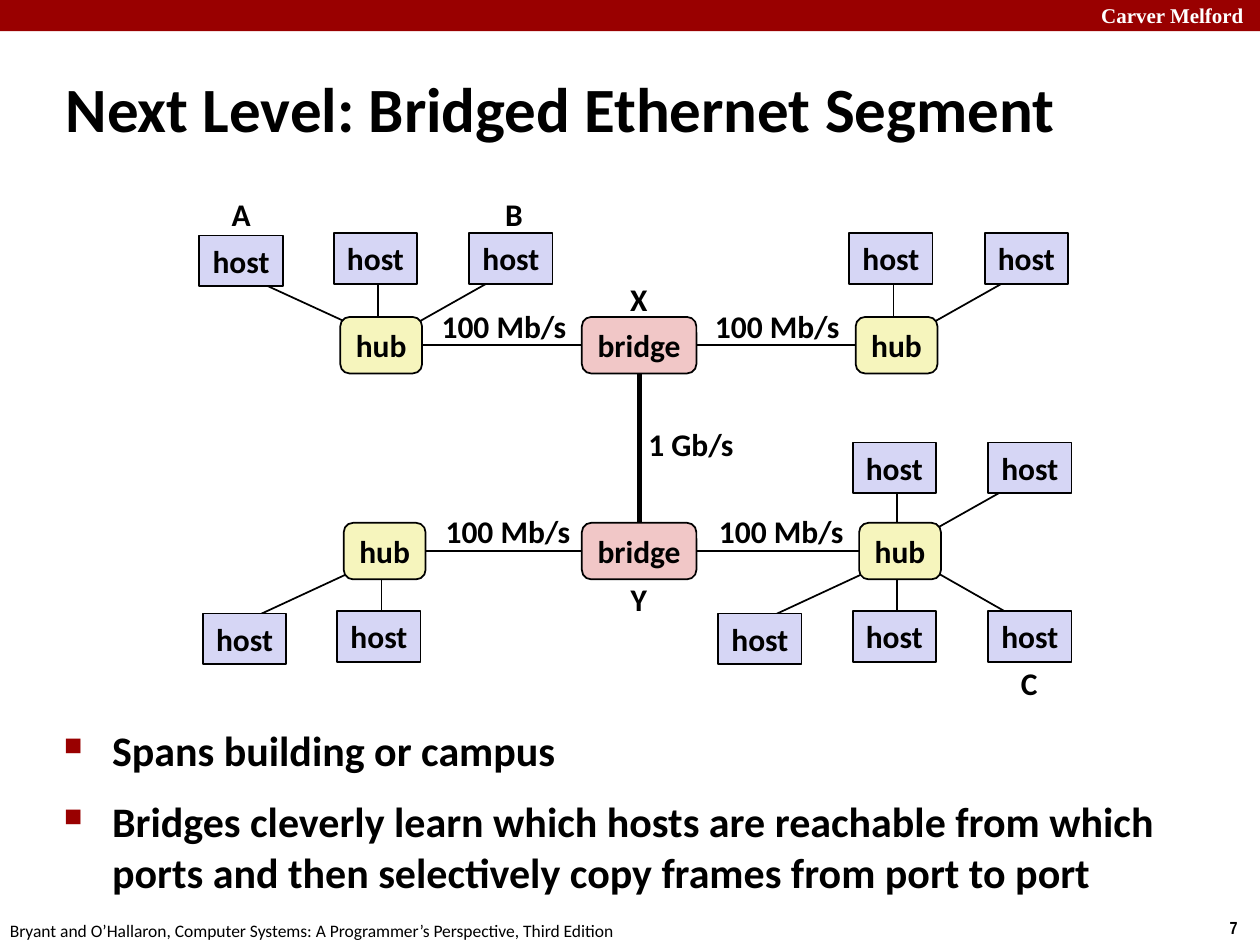
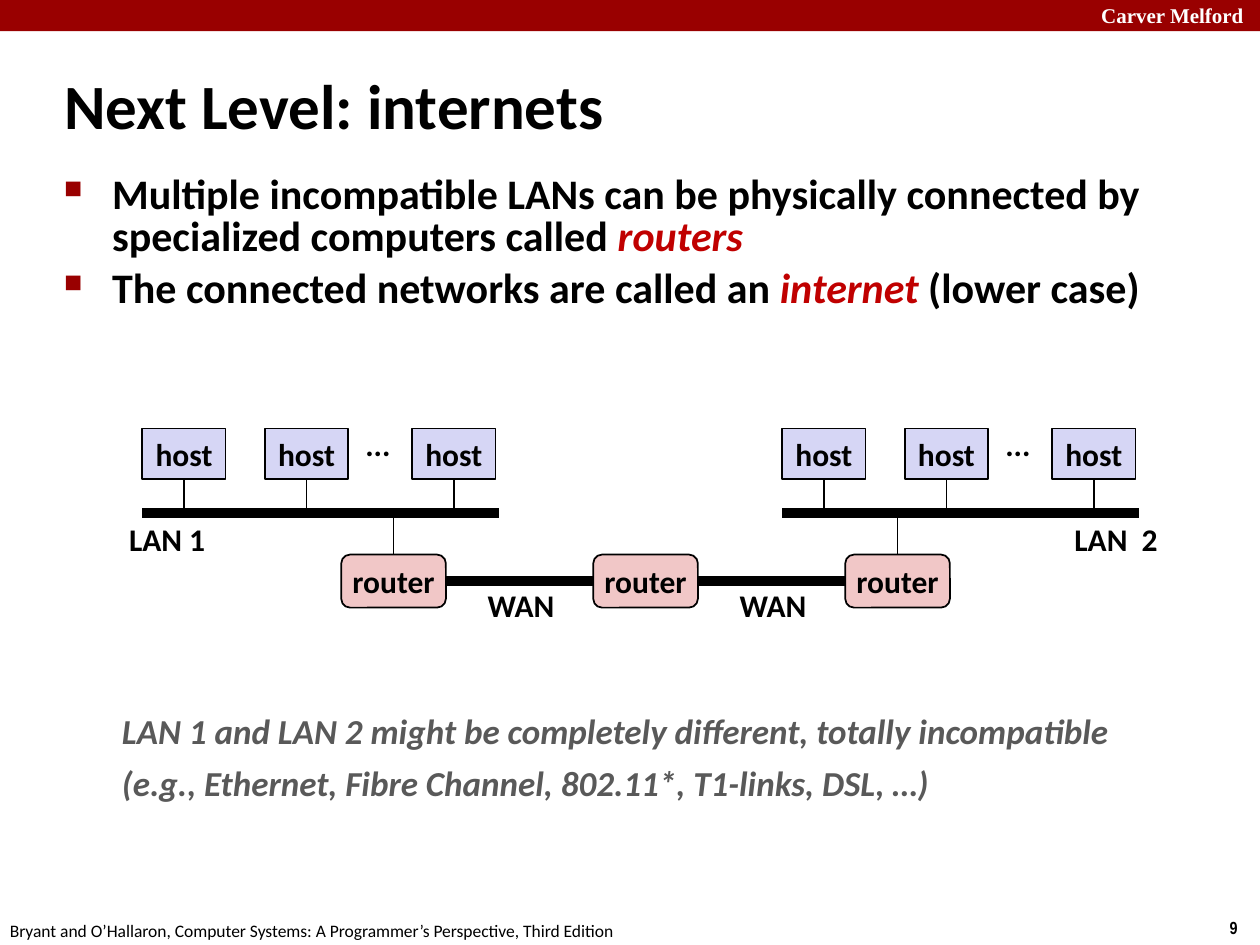
from lxml import etree
from pptx import Presentation
from pptx.dml.color import RGBColor
from pptx.enum.shapes import MSO_CONNECTOR, MSO_SHAPE
from pptx.enum.text import MSO_ANCHOR, PP_ALIGN
from pptx.oxml.ns import qn
from pptx.util import Cm, Pt

RECT, ROUND = MSO_SHAPE.RECTANGLE, MSO_SHAPE.ROUNDED_RECTANGLE
LINE = MSO_CONNECTOR.STRAIGHT
LEFT, CENTER = PP_ALIGN.LEFT, PP_ALIGN.CENTER
TOP, MIDDLE = MSO_ANCHOR.TOP, MSO_ANCHOR.MIDDLE
N, W, S, E = range(4)  # connection sites

BLACK = RGBColor(0x00, 0x00, 0x00)
WHITE = RGBColor(0xFF, 0xFF, 0xFF)
MAROON = RGBColor(0x99, 0x00, 0x00)
RED = RGBColor(0xC0, 0x00, 0x00)
GRAY = RGBColor(0x59, 0x59, 0x59)
LILAC = RGBColor(0xD6, 0xD6, 0xF5)
CREAM = RGBColor(0xF6, 0xF5, 0xBD)
PINK = RGBColor(0xF1, 0xC7, 0xC7)

ORG = "Carver Melford"
BOOK = ("Bryant and O’Hallaron, Computer Systems: "
        "A Programmer’s Perspective, Third Edition")

# All places and sizes are in centimetres.
KINDS = {  # preset, fill, width, height
    "host": (RECT, LILAC, 1.68, 1.02),
    "hub": (ROUND, CREAM, 1.65, 1.14),
    "bridge": (ROUND, PINK, 2.31, 1.14),
    "router": (ROUND, PINK, 2.11, 1.07),
}
LABEL_W, LABEL_H = 3.6, 1.02

# Segment slide: bridge top, then hubs as (left, rows of (host top, slots))
BRIDGE_X = 11.73
TIERS = [
    (6.39, [(6.86, [(4.7, "left mid right")]),
            (17.25, [(4.7, "mid right")])]),
    (10.54, [(6.93, [(12.32, "left mid")]),
             (17.32, [(8.92, "mid right"), (12.32, "left mid right")])]),
]
SLOTS = {  # from hub left: host left, spoke near end, spoke far end
    "left": (-2.84, 0.33, -1.98),
    "mid": (-0.13, 0.76, 0.76),
    "right": (2.6, 1.4, 3.28),
}
LEFT_DROP = 0.05
SPOKE_UP, SPOKE_DOWN = (0.2, -0.86), (0.91, 1.98)
TAGS = [  # text, centre x, top
    ("A", 4.86, 3.81), ("B", 10.36, 3.81), ("C", 20.75, 13.26),
    ("X", 12.88, 5.51), ("Y", 12.88, 11.56), ("1 Gb/s", 13.93, 8.43),
    ("100 Mb/s", 10.16, 6.07), ("100 Mb/s", 15.67, 6.07),
    ("100 Mb/s", 10.24, 10.2), ("100 Mb/s", 15.75, 10.2),
]
SPANS = ["Spans building or campus",
         "Bridges cleverly learn which hosts are reachable from which "
         "ports and then selectively copy frames from port to port"]

# Internet slide
LANS = [("LAN 1", 2.87, 3.37), ("LAN  2", 15.77, 22.5)]  # text, left, centre
HOSTS_DX, DOTS_DX, BUS_W = (0, 2.47, 5.44), 4.75, 7.19
HOST_Y, BUS_Y, ROUTER_Y = 8.64, 10.34, 11.18
ROUTERS = [6.88 + 5.08 * i for i in range(3)]
JOINS = ["Multiple incompatible LANs can be physically connected by "
         "specialized computers called |routers|",
         "The connected networks are called an |internet |(lower case)"]
NOTE = ["LAN 1 and LAN 2 might be completely different, totally incompatible",
        "(e.g., Ethernet, Fibre Channel, 802.11*, T1-links, DSL, …)"]


def write(shape, *paras, size=18, font="Calibri", color=BLACK, bold=True,
          italic=False, align=CENTER, anchor=MIDDLE, wrap=False, gaps=()):
    """Fill a shape with paragraphs; words between bars are emphasised."""
    frame = shape.text_frame
    frame.word_wrap, frame.vertical_anchor = wrap, anchor
    for i, text in enumerate(paras):
        para = frame.add_paragraph() if i else frame.paragraphs[0]
        para.alignment = align
        if gaps:
            para.space_before = Pt(gaps[i])
        for j, part in enumerate(text.split("|")):
            if not part:
                continue
            mark = j % 2 == 1
            run = para.add_run()
            run.text = part
            face = run.font
            face.name, face.size, face.bold = font, Pt(size), bold
            face.italic = italic or mark
            face.color.rgb = RED if mark else color
    return shape


def box(slide, x, y, w, h):
    return slide.shapes.add_textbox(Cm(x), Cm(y), Cm(w), Cm(h))


def label(slide, text, mid, y):
    write(box(slide, mid - LABEL_W / 2, y, LABEL_W, LABEL_H), text)


def node(slide, kind, x, y):
    preset, fill, w, h = KINDS[kind]
    shape = slide.shapes.add_shape(preset, Cm(x), Cm(y), Cm(w), Cm(h))
    shape.shadow.inherit = False
    shape.fill.solid()
    shape.fill.fore_color.rgb = fill
    shape.line.color.rgb = BLACK
    shape.line.width = Pt(1)
    return write(shape, kind)


def wire(slide, x1=0, y1=0, x2=0, y2=0, width=1, start=None, end=None):
    """Draw a line; start and end are (shape, site) pairs to join."""
    line = slide.shapes.add_connector(LINE, Cm(x1), Cm(y1), Cm(x2), Cm(y2))
    line.line.color.rgb = BLACK
    line.line.width = Pt(width)
    etree.SubElement(line._element.spPr, qn("a:effectLst"))
    if start:
        line.begin_connect(*start)
    if end:
        line.end_connect(*end)


def indent(para, size):
    props = para._p.get_or_add_pPr()
    props.set("marL", str(Cm(size)))
    props.set("indent", str(-Cm(size)))
    return props


def bullets(slide, y, h, paras, gaps, spacing):
    shape = write(box(slide, 1.04, y, 23.09, h), *paras, size=24, align=LEFT,
                  anchor=TOP, wrap=True, gaps=gaps)
    for para, space in zip(shape.text_frame.paragraphs, spacing):
        para.line_spacing = space
        props = indent(para, 0.97)
        tint = etree.SubElement(props, qn("a:buClr"))
        etree.SubElement(tint, qn("a:srgbClr"), val=str(MAROON))
        etree.SubElement(props, qn("a:buSzPct"), val="60000")
        etree.SubElement(props, qn("a:buChar"), char="■")


def start_slide(deck, title, x, y, page):
    slide = deck.slides.add_slide(deck.slide_layouts[5])
    band = slide.shapes.add_shape(RECT, 0, 0, deck.slide_width, Cm(0.63))
    band.shadow.inherit = False
    band.fill.solid()
    band.fill.fore_color.rgb = MAROON
    band.line.fill.background()
    write(box(slide, 21.95, -0.08, 3.63, 0.76), ORG, size=12, color=WHITE,
          font="Times New Roman", align=LEFT, anchor=TOP, wrap=True)
    write(box(slide, 24.54, 18.36, 0.86, 0.69), page, size=10,
          font="Arial Narrow", align=LEFT, anchor=TOP)
    write(box(slide, -0.05, 18.42, 12.9, 0.69), BOOK, size=10, bold=False,
          align=LEFT, anchor=TOP)
    head = slide.shapes.title
    head.left, head.top, head.width, head.height = (
        Cm(x), Cm(y), Cm(22.83), Cm(1.6))
    write(head, title, size=36, align=LEFT, wrap=True)
    indent(head.text_frame.paragraphs[0], 0.33)
    return slide


def star(slide, x, y, rows):
    """Draw a hub with its spokes and hosts, and return the hub."""
    spots = [(top, slot) for top, slots in rows for slot in slots.split()]
    for top, slot in spots:
        _, near, far = SLOTS[slot]
        dy1, dy2 = SPOKE_DOWN if top > y else SPOKE_UP
        wire(slide, x + near, y + dy1, x + far, y + dy2)
    for top, slot in spots:
        drop = LEFT_DROP if slot == "left" else 0
        node(slide, "host", x + SLOTS[slot][0], top + drop)
    return node(slide, "hub", x, y)


def segment_slide(deck):
    slide = start_slide(deck, "Next Level: Bridged Ethernet Segment",
                        1.07, 1.37, "7")
    bridges = []
    for y, hubs in TIERS:
        west, east = [star(slide, x, y, rows) for x, rows in hubs]
        bridge = node(slide, "bridge", BRIDGE_X, y)
        wire(slide, start=(west, E), end=(bridge, W))
        wire(slide, start=(bridge, E), end=(east, W))
        bridges.append(bridge)
    upper, lower = bridges
    wire(slide, width=3, start=(upper, S), end=(lower, N))
    for tag in TAGS:
        label(slide, *tag)
    bullets(slide, 14.63, 2.31, SPANS, (4.8, 12), (0.85, 1.0))


def internet_slide(deck):
    slide = start_slide(deck, "Next Level: internets", 1.04, 1.3, "9")
    bullets(slide, 3.4, 3.38, JOINS, (4.8, 4.8), (0.85, 0.85))
    for name, x, mid in LANS:
        wire(slide, x, BUS_Y, x + BUS_W, BUS_Y, width=6)
        for dx in HOSTS_DX:
            host = node(slide, "host", x + dx, HOST_Y)
            foot = x + dx + KINDS["host"][2] / 2
            wire(slide, x2=foot, y2=BUS_Y, start=(host, S))
        label(slide, "...", x + DOTS_DX, 8.43)
        label(slide, name, mid, 10.36)
    nodes = [node(slide, "router", x, ROUTER_Y) for x in ROUTERS]
    half = KINDS["router"][2] / 2
    for i in (0, 2):
        wire(slide, ROUTERS[i] + half, BUS_Y, end=(nodes[i], N))
    for x, west, east in zip(ROUTERS, nodes, nodes[1:]):
        wire(slide, width=6, start=(west, E), end=(east, W))
        label(slide, "WAN", x + half + 2.57, 11.68)
    write(box(slide, 2.21, 14.17, 22.56, 2.18), *NOTE, size=20, color=GRAY,
          italic=True, align=LEFT, anchor=TOP, wrap=True, gaps=(0, 6))


def main():
    deck = Presentation()
    deck.slide_width, deck.slide_height = Cm(25.4), Cm(19.05)
    segment_slide(deck)
    internet_slide(deck)
    deck.save("out.pptx")


if __name__ == "__main__":
    main()
